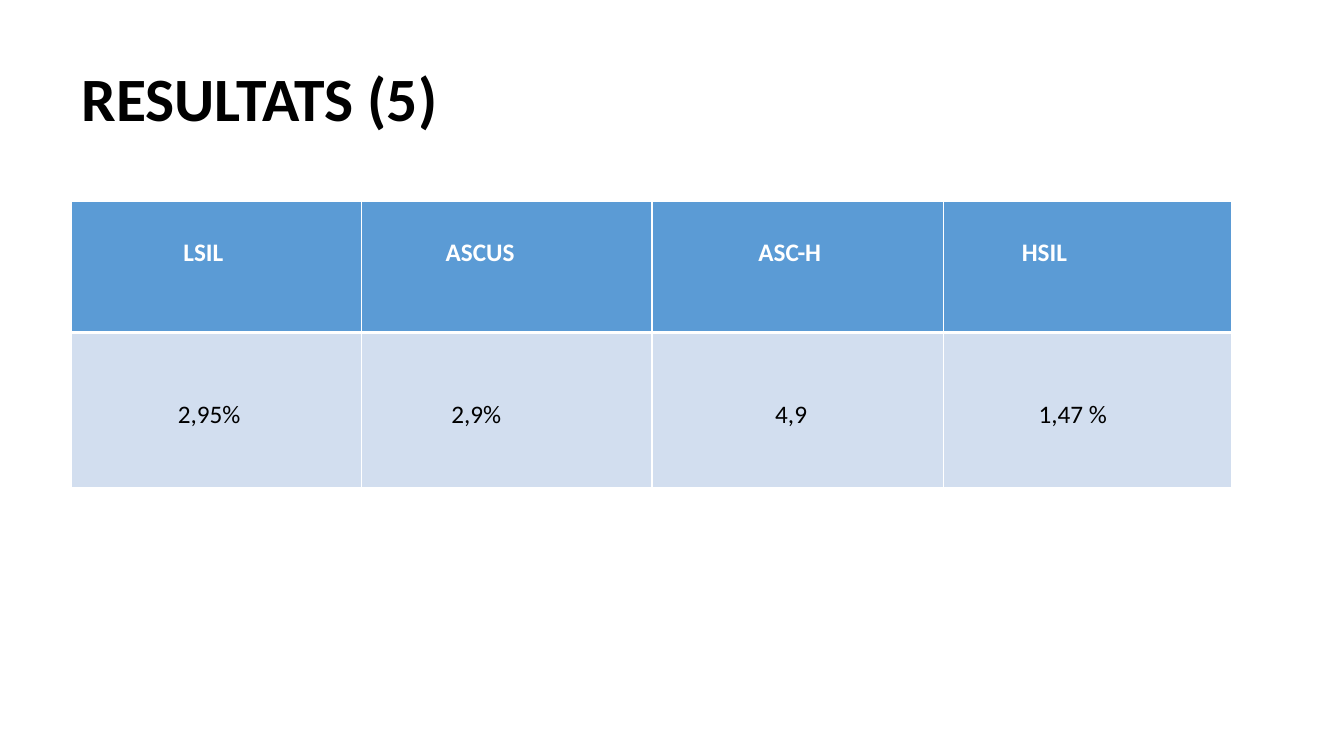
import dataclasses

import pptx
import pptx.dml.color
import pptx.enum.text
import pptx.oxml
import pptx.oxml.ns
import pptx.presentation
import pptx.slide
import pptx.table
import pptx.text.text
import pptx.util

Pt = pptx.util.Pt
WHITE = "FFFFFF"
BLACK = "000000"


@dataclasses.dataclass(frozen=True)
class Entry:
    text: str
    indent: float


@dataclasses.dataclass(frozen=True)
class Row:
    height: float
    top_margin: float
    fill: str
    color: str
    bold: bool
    borders: dict[str, float]
    entries: list[Entry]


COLUMN_WIDTHS = [207.4, 207.4, 208.1, 205.9]
ROWS = [
    Row(93.6, 25.6, "5B9BD5", WHITE, True, {"L": 1, "R": 1, "T": 1, "B": 3},
        [Entry("LSIL", 80), Entry("ASCUS", 60), Entry("ASC-H", 76), Entry("HSIL", 56)]),
    Row(110.9, 47.5, "D2DEEF", BLACK, False, {"L": 1, "R": 1, "T": 3, "B": 1},
        [Entry("2,95%", 76), Entry("2,9%", 64), Entry("4,9", 88), Entry("1,47 %", 68)]),
]


def rgb(value: str) -> pptx.dml.color.RGBColor:
    return pptx.dml.color.RGBColor.from_string(value)


def apply_format(target: object, values: dict[str, object]) -> None:
    for name, value in values.items():
        setattr(target, name, value)


def write_text(tf: pptx.text.text.TextFrame, text: str, size: float, color: str, bold: bool) -> None:
    p = tf.paragraphs[0]
    p.alignment = pptx.enum.text.PP_ALIGN.LEFT
    r = p.add_run()
    r.text = text
    apply_format(r.font, {"name": "Calibri", "size": Pt(size), "bold": bold})
    r.font.color.rgb = rgb(color)


def add_border(cell: pptx.table._Cell, side: str, width: float) -> None:
    ns = pptx.oxml.ns.nsdecls("a")
    cell._tc.get_or_add_tcPr().append(pptx.oxml.parse_xml(
        f'<a:ln{side} {ns} w="{Pt(width)}"><a:solidFill><a:srgbClr val="{WHITE}"/>'
        f'</a:solidFill></a:ln{side}>'))


def add_title(s: pptx.slide.Slide) -> None:
    sp = s.shapes.title
    apply_format(sp, {"left": Pt(51), "top": Pt(20), "width": Pt(828), "height": Pt(104.4)})
    tf = sp.text_frame
    apply_format(tf, {"word_wrap": True, "vertical_anchor": pptx.enum.text.MSO_ANCHOR.MIDDLE})
    write_text(tf, "RESULTATS (5)", 44, BLACK, True)
    tf.paragraphs[0].line_spacing = 0.9


def add_results(s: pptx.slide.Slide) -> None:
    height = sum(row.height for row in ROWS)
    table = s.shapes.add_table(len(ROWS), len(COLUMN_WIDTHS), Pt(51), Pt(144),
                               Pt(sum(COLUMN_WIDTHS)), Pt(height)).table
    for column, width in zip(table.columns, COLUMN_WIDTHS):
        column.width = Pt(width)
    for i, row in enumerate(ROWS):
        table.rows[i].height = Pt(row.height)
        for j, entry in enumerate(row.entries):
            cell = table.cell(i, j)
            apply_format(cell, {"margin_left": Pt(entry.indent), "margin_top": Pt(row.top_margin),
                                "vertical_anchor": pptx.enum.text.MSO_ANCHOR.TOP})
            for side, width in row.borders.items():
                add_border(cell, side, width)
            cell.fill.solid()
            cell.fill.fore_color.rgb = rgb(row.fill)
            write_text(cell.text_frame, entry.text, 18, row.color, row.bold)


def main() -> None:
    prs = pptx.Presentation()
    apply_format(prs, {"slide_width": Pt(960), "slide_height": Pt(540)})
    s = prs.slides.add_slide(prs.slide_layouts[5])
    add_title(s)
    add_results(s)
    prs.save("out.pptx")


if __name__ == "__main__":
    main()
